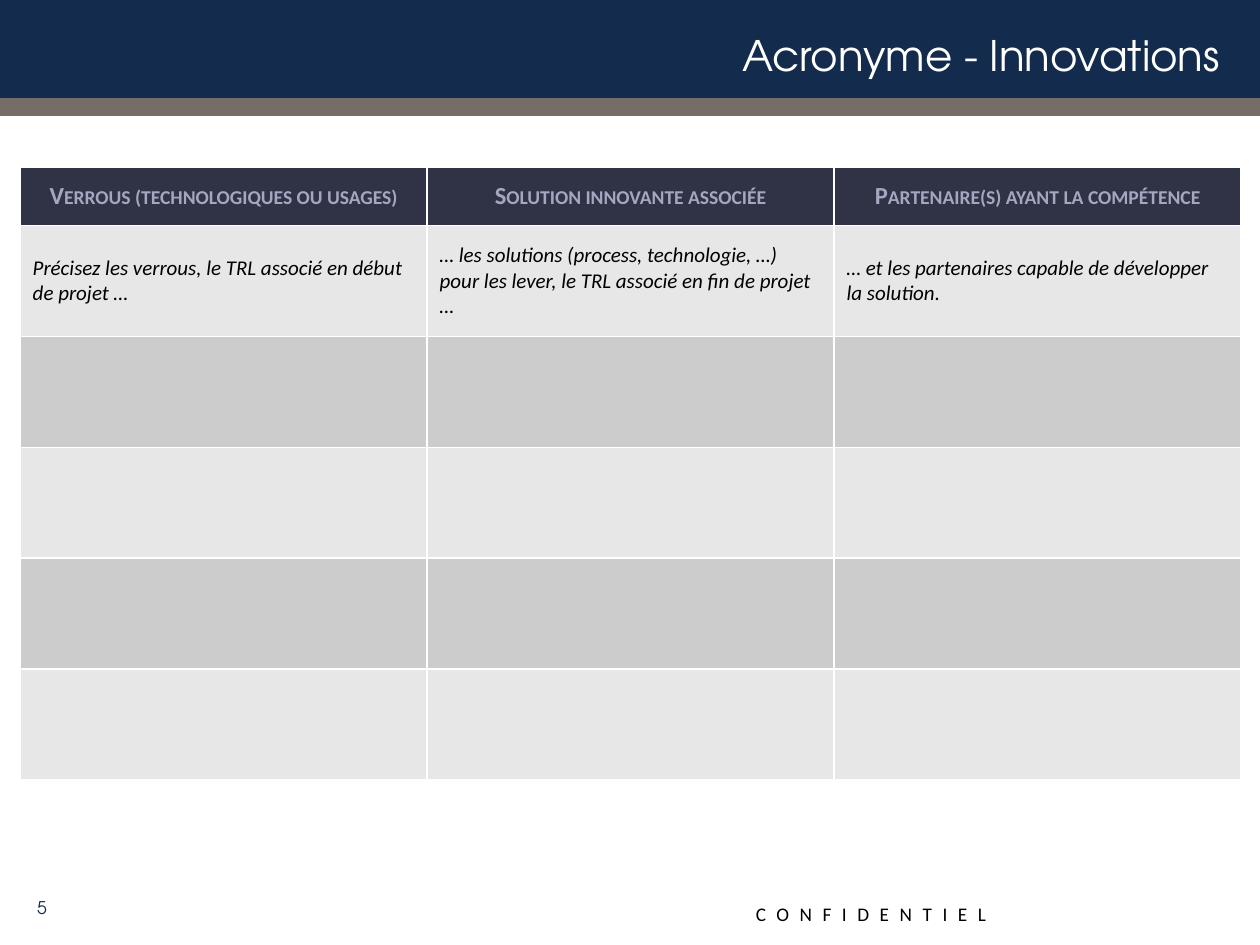
from lxml.etree import SubElement
from pptx import Presentation
from pptx.dml.color import RGBColor
from pptx.enum.shapes import MSO_SHAPE
from pptx.enum.text import MSO_ANCHOR, PP_ALIGN
from pptx.oxml.ns import qn
from pptx.util import Inches, Pt

NAVY = RGBColor(0x13, 0x2C, 0x4D)
TAUPE = RGBColor(0x76, 0x6C, 0x68)
SLATE = RGBColor(0x30, 0x33, 0x46)
LAVENDER = RGBColor(0xA3, 0xA7, 0xC0)
LIGHT_GREY = RGBColor(0xE7, 0xE7, 0xE7)
MID_GREY = RGBColor(0xCC, 0xCC, 0xCC)
WHITE = RGBColor(0xFF, 0xFF, 0xFF)
BLACK = RGBColor(0, 0, 0)
BODY_FONT = "Calibri"
TITLE_FONT = "TeX Gyre Adventor"

BANDS = [((0, 0, 10, 0.9), NAVY), ((0, 0.78, 10, 0.14), TAUPE)]
HEADERS = [
    "Verrous (technologiques ou usages)",
    "Solution innovante associée",
    "Partenaire(s) ayant la compétence",
]
GUIDANCE = [
    "Précisez les verrous, le TRL associé en début de projet …",
    "… les solutions (process, technologie, …) pour les lever, le TRL associé en fin de projet …",
    "… et les partenaires capable de développer la solution.",
]
EMPTY_ROWS = 4
COLUMN_WIDTH, HEADER_HEIGHT, ROW_HEIGHT = 3.23, 0.46, 0.88


def style(para, size, color, font=BODY_FONT, align=PP_ALIGN.LEFT):
    para.alignment = align
    para.font.name = font
    para.font.size = Pt(size)
    para.font.color.rgb = color


def add_text(page, place, text, size, color, font, align=PP_ALIGN.LEFT,
             anchor=MSO_ANCHOR.MIDDLE, wrap=True):
    box = page.shapes.add_textbox(*map(Inches, place))
    box.text_frame.word_wrap = wrap
    box.text_frame.vertical_anchor = anchor
    para = box.text_frame.paragraphs[0]
    span = para.add_run()
    span.text = text
    style(para, size, color, font, align)
    return span


def add_borders(cell):
    properties = cell._tc.get_or_add_tcPr()
    for side in ("a:lnL", "a:lnR", "a:lnT", "a:lnB"):
        line = SubElement(properties, qn(side), w=str(Pt(1)))
        fill = SubElement(line, qn("a:solidFill"))
        SubElement(fill, qn("a:srgbClr"), val=str(WHITE))


def fill_cell(cell, row, text):
    add_borders(cell)
    cell.fill.solid()
    cell.fill.fore_color.rgb = SLATE if row == 0 else LIGHT_GREY if row % 2 else MID_GREY
    cell.vertical_anchor = MSO_ANCHOR.MIDDLE
    if not text:
        return
    para = cell.text_frame.paragraphs[0]
    span = para.add_run()
    span.text = text
    if row == 0:
        style(para, 14, LAVENDER, align=PP_ALIGN.CENTER)
        para.font.bold = True
        span.font._element.set("cap", "small")
    else:
        style(para, 12, BLACK)
        para.font.bold = False
        para.font.italic = True


def add_innovation_table(page):
    rows = [HEADERS, GUIDANCE] + [[""] * len(HEADERS)] * EMPTY_ROWS
    heights = [HEADER_HEIGHT] + [ROW_HEIGHT] * (len(rows) - 1)
    table = page.shapes.add_table(
        len(rows), len(HEADERS), Inches(0.16), Inches(1.33),
        Inches(COLUMN_WIDTH * len(HEADERS)), Inches(sum(heights))).table
    for column in table.columns:
        column.width = Inches(COLUMN_WIDTH)
    for row, (texts, height) in enumerate(zip(rows, heights)):
        table.rows[row].height = Inches(height)
        for column, text in enumerate(texts):
            fill_cell(table.cell(row, column), row, text)


def main():
    deck = Presentation()
    deck.slide_width, deck.slide_height = Inches(10), Inches(7.5)
    page = deck.slides.add_slide(deck.slide_layouts[6])
    for place, color in BANDS:
        band = page.shapes.add_shape(MSO_SHAPE.RECTANGLE, *map(Inches, place))
        band.shadow.inherit = False
        band.fill.solid()
        band.fill.fore_color.rgb = color
        band.line.fill.background()
    label = add_text(page, (5.9, 7.11, 2.13, 0.29), "CONFIDENTIEL", 11, BLACK,
                     BODY_FONT, anchor=MSO_ANCHOR.TOP, wrap=False)
    label.font._element.set("spc", "600")
    add_text(page, (0.15, 0.14, 9.63, 0.58), "Acronyme - Innovations", 24, WHITE,
             TITLE_FONT, PP_ALIGN.RIGHT)
    add_text(page, (-0.04, 7, 0.51, 0.4), "5", 10, NAVY, TITLE_FONT, PP_ALIGN.RIGHT)
    add_innovation_table(page)
    deck.save("out.pptx")


if __name__ == "__main__":
    main()
